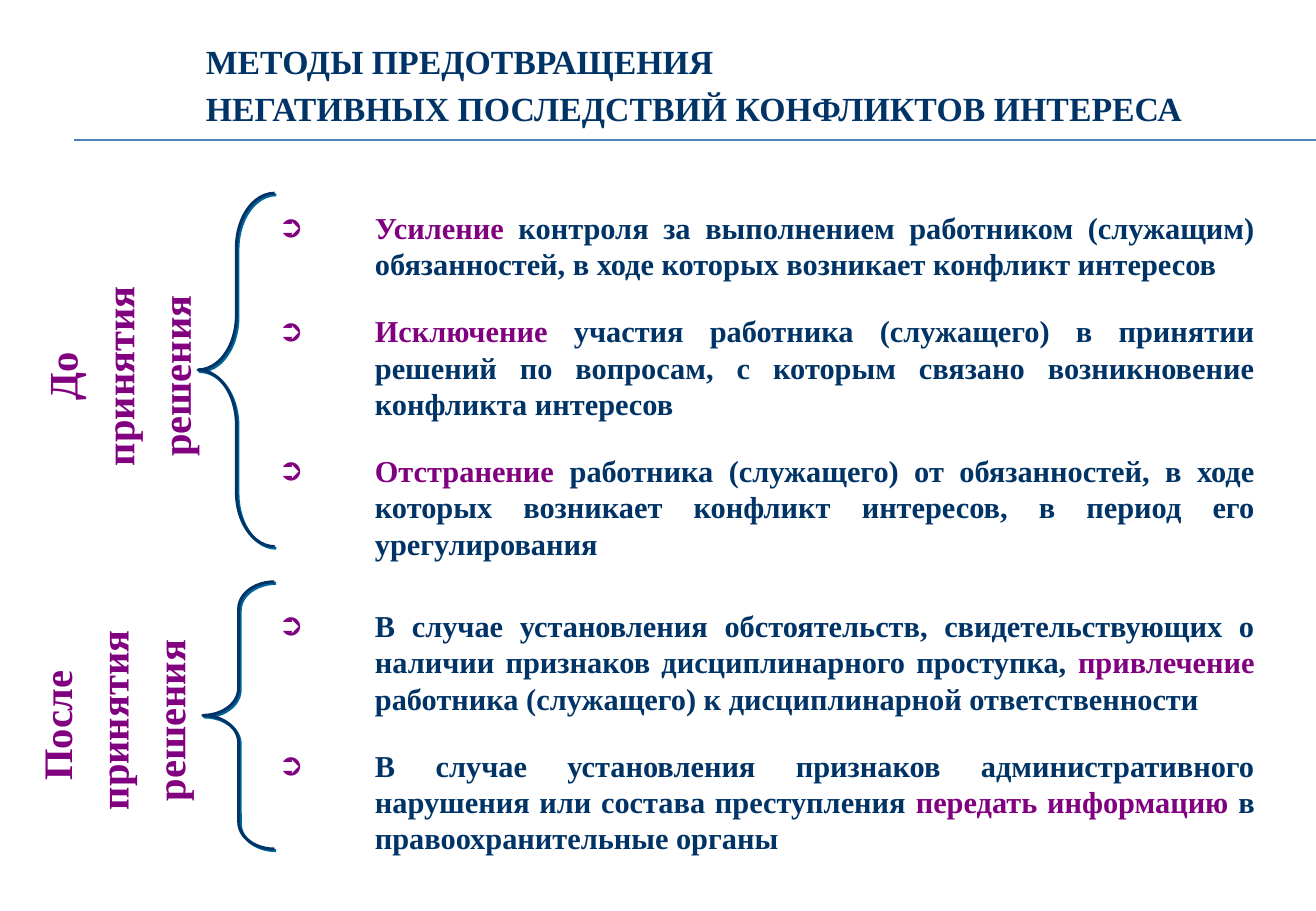
from lxml.etree import SubElement
from pptx import Presentation
from pptx.dml.color import RGBColor
from pptx.enum.shapes import MSO_CONNECTOR, MSO_SHAPE
from pptx.enum.text import MSO_ANCHOR, MSO_AUTO_SIZE, PP_ALIGN
from pptx.oxml.ns import qn
from pptx.util import Pt

NAVY = RGBColor(0x00, 0x33, 0x66)
PURPLE = RGBColor(0x80, 0x00, 0x80)
RULE_BLUE = RGBColor(0x4F, 0x81, 0xBD)
SHADE = RGBColor(0x00, 0x66, 0x99)

FRAME_FORMAT = dict(margin_left=0, margin_right=0, margin_top=0, margin_bottom=0,
                    auto_size=MSO_AUTO_SIZE.NONE)
HEADING = ["МЕТОДЫ ПРЕДОТВРАЩЕНИЯ", "НЕГАТИВНЫХ ПОСЛЕДСТВИЙ КОНФЛИКТОВ ИНТЕРЕСА"]
METHODS = [
    (0, [("Усиление", PURPLE),
         (" контроля за выполнением работником (служащим) обязанностей, "
          "в ходе которых возникает конфликт интересов", NAVY)]),
    (18, [("Исключение", PURPLE),
          (" участия работника (служащего) в принятии решений по вопросам, "
           "с которым связано возникновение конфликта интересов", NAVY)]),
    (18, [("Отстранение ", PURPLE),
          ("работника (служащего) от обязанностей, в ходе которых возникает "
           "конфликт интересов, в период его урегулирования", NAVY)]),
    (27, [("В случае установления обстоятельств, свидетельствующих о наличии "
           "признаков дисциплинарного проступка, ", NAVY),
          ("привлечение ", PURPLE),
          ("работника (служащего) к дисциплинарной ответственности", NAVY)]),
    (18, [("В случае установления признаков административного нарушения "
           "или состава преступления ", NAVY),
          ("передать информацию", PURPLE),
          (" в правоохранительные органы", NAVY)]),
]
STAGES = [
    (["До", "принятия", "решения"], (22.5, 158, 95, 130), (117.4, 114.5, 45.4, 209.5), 0.713),
    (["После ", "принятия", "решения"], (19.2, 362, 95, 130), (120.2, 344.9, 42.5, 158.4), 0.378),
]


def apply(target, **values):
    """Set every given attribute on the target."""
    for name, value in values.items():
        setattr(target, name, value)


def place(shape, left, top, width, height):
    """Move and size a shape, in points."""
    apply(shape, left=Pt(left), top=Pt(top), width=Pt(width), height=Pt(height))


def add_run(paragraph, text, size, color):
    """Append a bold run to a paragraph."""
    run = paragraph.add_run()
    run.text = text
    apply(run.font, name="Times New Roman", size=Pt(size), bold=True)
    run.font.color.rgb = color


def paragraphs(frame, count):
    """Yield the frame's first paragraph, then new ones up to the count."""
    yield frame.paragraphs[0]
    for _ in range(count - 1):
        yield frame.add_paragraph()


def write_lines(frame, lines, size, color, alignment):
    """Write one paragraph per line with a gap of a fifth of the text size."""
    for index, (paragraph, line) in enumerate(zip(paragraphs(frame, len(lines)), lines)):
        apply(paragraph, alignment=alignment, space_before=Pt(size / 5 if index else 0))
        add_run(paragraph, line, size, color)


def add_heading(slide, left, top, width, height):
    """Fill the title and draw the double rule beneath it."""
    title = slide.shapes.title
    place(title, left, top, width, height)
    apply(title.text_frame, **FRAME_FORMAT, word_wrap=False, vertical_anchor=MSO_ANCHOR.TOP)
    write_lines(title.text_frame, HEADING, 20, NAVY, PP_ALIGN.LEFT)
    for offset in (58.6, 59.3):
        rule = slide.shapes.add_connector(MSO_CONNECTOR.STRAIGHT, Pt(left - 78),
                                          Pt(top + offset), Pt(780), Pt(top + offset))
        rule.line.color.rgb = RULE_BLUE
        rule.line.width = Pt(0.75)
        SubElement(rule._element.spPr, qn("a:effectLst"))


def add_bullet(paragraph, indent):
    """Give a paragraph a hanging purple arrow bullet."""
    properties = paragraph._p.get_or_add_pPr()
    properties.set("marL", str(Pt(indent)))
    properties.set("indent", str(-Pt(indent)))
    color = SubElement(properties, qn("a:buClr"))
    SubElement(color, qn("a:srgbClr"), val=str(PURPLE))
    SubElement(properties, qn("a:buChar"), char="➲")


def add_methods(slide, left, top, width, height):
    """Fill the body with the bulleted methods."""
    body = slide.placeholders[1]
    place(body, left, top, width, height)
    apply(body.text_frame, **FRAME_FORMAT, word_wrap=True, vertical_anchor=MSO_ANCHOR.TOP)
    for paragraph, (gap, parts) in zip(paragraphs(body.text_frame, len(METHODS)), METHODS):
        add_bullet(paragraph, 57.2)
        apply(paragraph, alignment=PP_ALIGN.JUSTIFY, space_before=Pt(gap),
              line_spacing=Pt(21.6))
        for text, color in parts:
            add_run(paragraph, text, 18, color)


def add_stage_label(slide, lines, left, top, width, height):
    """Write a label that reads upwards within the given box."""
    label = slide.shapes.add_textbox(0, 0, 0, 0)
    place(label, left + (width - height) / 2, top + (height - width) / 2, height, width)
    label.rotation = 270
    apply(label.text_frame, **FRAME_FORMAT, word_wrap=True, vertical_anchor=MSO_ANCHOR.MIDDLE)
    write_lines(label.text_frame, lines, 24, PURPLE, PP_ALIGN.CENTER)


def add_brace(slide, curve, left, top, width, height):
    """Draw a left brace with a fine offset shadow."""
    brace = slide.shapes.add_shape(MSO_SHAPE.LEFT_BRACE, Pt(left), Pt(top),
                                   Pt(width), Pt(height))
    brace.adjustments[0] = curve
    brace.adjustments[1] = 0.5
    brace.fill.background()
    brace.line.color.rgb = NAVY
    brace.line.width = Pt(1.75)
    brace.shadow.inherit = False
    effects = brace._element.spPr.find(qn("a:effectLst"))
    shadow = SubElement(effects, qn("a:outerShdw"), dist=str(Pt(1.4)), dir="2700000")
    SubElement(shadow, qn("a:srgbClr"), val=str(SHADE))


def main():
    """Build and save the slide."""
    deck = Presentation()
    apply(deck, slide_width=Pt(780), slide_height=Pt(540))
    slide = deck.slides.add_slide(deck.slide_layouts[1])
    add_heading(slide, 122, 24.2, 590, 52)
    add_methods(slide, 165, 124, 578.7, 395)
    for lines, label_box, brace_box, curve in STAGES:
        add_stage_label(slide, lines, *label_box)
        add_brace(slide, curve, *brace_box)
    deck.save("out.pptx")


if __name__ == "__main__":
    main()
